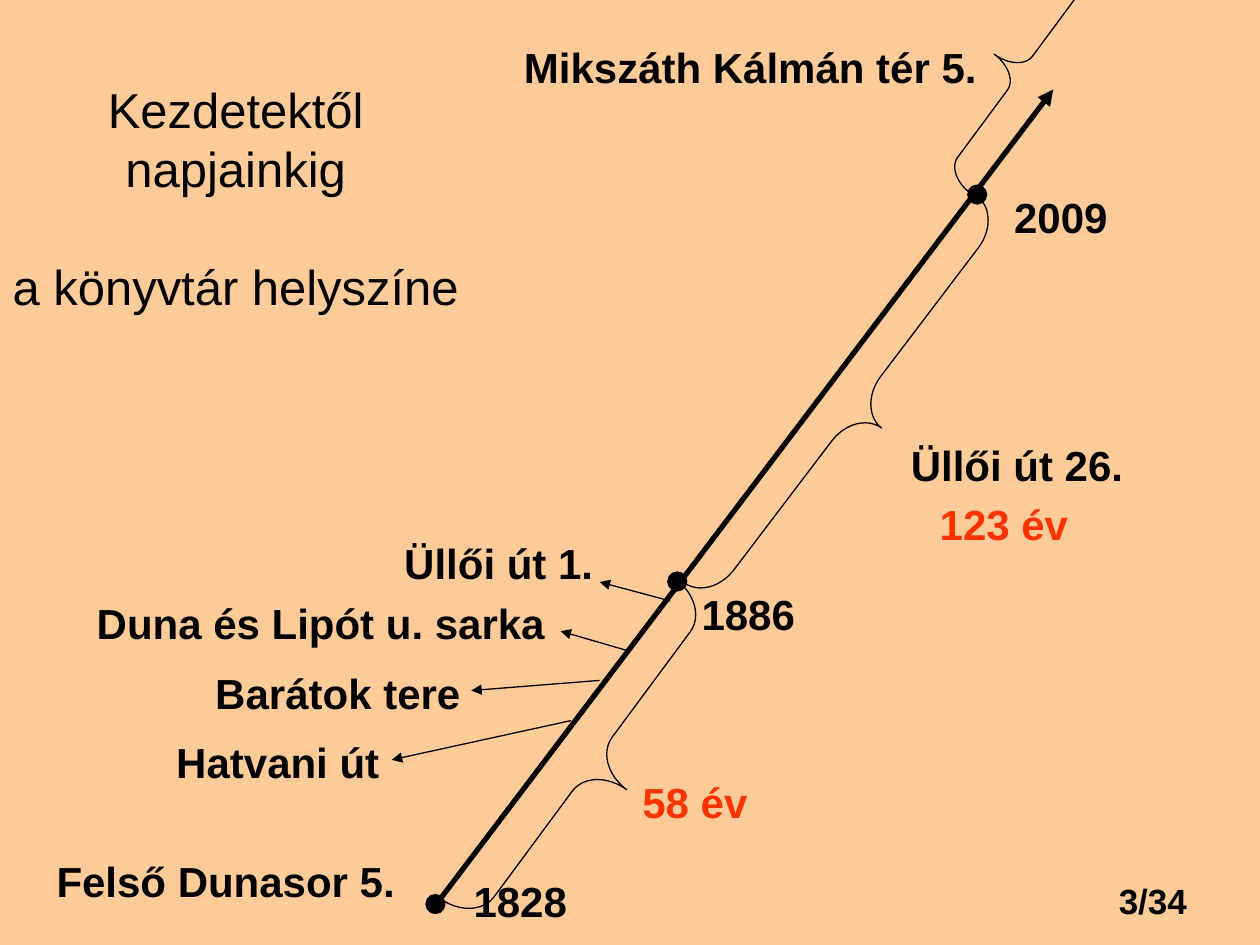
from lxml.etree import SubElement
from pptx import Presentation
from pptx.dml.color import RGBColor
from pptx.enum.shapes import MSO_CONNECTOR, MSO_SHAPE
from pptx.enum.text import MSO_ANCHOR, PP_ALIGN
from pptx.oxml.ns import qn
from pptx.util import Pt

COLORS = {"background": "FFCC99", "ink": "000000", "years": "FF3300"}


def rgb(name):
    return RGBColor.from_string(COLORS[name])


class TimelineSlide:
    """Holds the text style and the slide being built."""

    def __init__(self, prs):
        self.s = prs.slides.add_slide(prs.slide_layouts[5])
        self.s.background.fill.solid()
        self.s.background.fill.fore_color.rgb = rgb("background")
        self.style = {"name": "Arial", "size": Pt(24), "bold": True}

    def format_font(self, font, color="ink", **changes):
        for key, value in {**self.style, **changes}.items():
            setattr(font, key, value)
        font.color.rgb = rgb(color)

    def title(self, paragraphs, x, y, w, h, gap):
        sp = self.s.shapes.title
        for key, value in {"left": x, "top": y, "width": w, "height": h}.items():
            setattr(sp, key, Pt(value))
        tf = sp.text_frame
        tf.word_wrap = True
        tf.vertical_anchor = MSO_ANCHOR.MIDDLE
        tf.text = "\n".join(paragraphs)
        for i, p in enumerate(tf.paragraphs):
            p.alignment = PP_ALIGN.CENTER
            p.line_spacing = 1.0
            p.space_before = Pt(gap if i else 0)
            self.format_font(p.runs[0].font, size=Pt(28), bold=False)

    def label(self, text, x, y, w, h=36, **font):
        tf = self.s.shapes.add_textbox(Pt(x), Pt(y), Pt(w), Pt(h)).text_frame
        tf.word_wrap = True
        r = tf.paragraphs[0].add_run()
        r.text = text
        self.format_font(r.font, **font)

    def arrow(self, x1, y1, x2, y2, width=0.75):
        line = self.s.shapes.add_connector(
            MSO_CONNECTOR.STRAIGHT, Pt(x1), Pt(y1), Pt(x2), Pt(y2))
        line.line.color.rgb = rgb("ink")
        line.line.width = Pt(width)
        spPr = line._element.spPr
        SubElement(spPr.find(qn("a:ln")), qn("a:tailEnd"), type="triangle")
        SubElement(spPr, qn("a:effectLst"))

    def shape(self, kind, x, y, w, h):
        sp = self.s.shapes.add_shape(kind, Pt(x), Pt(y), Pt(w), Pt(h))
        sp.shadow.inherit = False
        sp.line.color.rgb = rgb("ink")
        sp.line.width = Pt(0.75)
        return sp

    def dot(self, cx, cy, d=10.8):
        sp = self.shape(MSO_SHAPE.OVAL, cx - d / 2, cy - d / 2, d, d)
        sp.fill.solid()
        sp.fill.fore_color.rgb = rgb("ink")

    def brace(self, x, y, w, h, rotation, curve):
        sp = self.shape(MSO_SHAPE.RIGHT_BRACE, x, y, w, h)
        sp.fill.background()
        sp.rotation = rotation
        sp.adjustments[0] = curve
        sp.adjustments[1] = 0.5


def main():
    prs = Presentation()
    prs.slide_width, prs.slide_height = Pt(720), Pt(540)
    slide = TimelineSlide(prs)

    slide.title(["Kezdetektől napjainkig", "a könyvtár helyszíne"],
                0, 31.7, 269.3, 162, gap=34)

    # Time axis with its dated points
    slide.arrow(249.1, 517, 601.9, 51.1, width=3)
    for cx, cy in [(248.8, 516.6), (387, 332.3), (558.4, 111.2)]:
        slide.dot(cx, cy)
    for year, x, y in [("1828", 263.5, 496.8), ("1886", 393.8, 332.6),
                       ("2009", 572.4, 105.8)]:
        slide.label(year, x, y, 147.6)

    # Braces over the periods
    slide.brace(470.9, 95, 36.7, 277.2, 37.2, 0.63)
    slide.brace(313.9, 323.3, 49, 226.8, 36.5, 0.39)
    slide.brace(564.5, -30.2, 36.7, 144, 216.5, 0.33)

    # Library sites
    for site, x, y, w in [
        ("Felső Dunasor 5.", 25.2, 485.3, 215.3),
        ("Hatvani út", 93.6, 417.6, 215.3),
        ("Barátok tere", 115.9, 378, 215.3),
        ("Duna és Lipót u. sarka", 48.2, 337.7, 300.2),
        ("Üllői út 1.", 223.9, 303.8, 215.3),
        ("Üllői út 26.", 513.4, 247.7, 200),
        ("Mikszáth Kálmán tér 5.", 292.3, 20.2, 277.9),
    ]:
        slide.label(site, x, y, w)

    # Arrows from the axis to the early sites
    for ends in [(326.2, 411.8, 223.9, 434.2), (342.7, 388.8, 269.3, 394.6),
                 (360, 372.2, 320.4, 360.7), (383, 343.4, 342.7, 332.6)]:
        slide.arrow(*ends)

    # Lengths of the periods
    slide.label("123 év", 529.9, 281.5, 96.5, color="years")
    slide.label("58 év", 360, 439.9, 96.5, color="years")

    # Page number
    slide.label("3/34", 632.2, 499, 87.8, 31, size=Pt(20))

    prs.save("out.pptx")


if __name__ == "__main__":
    main()
